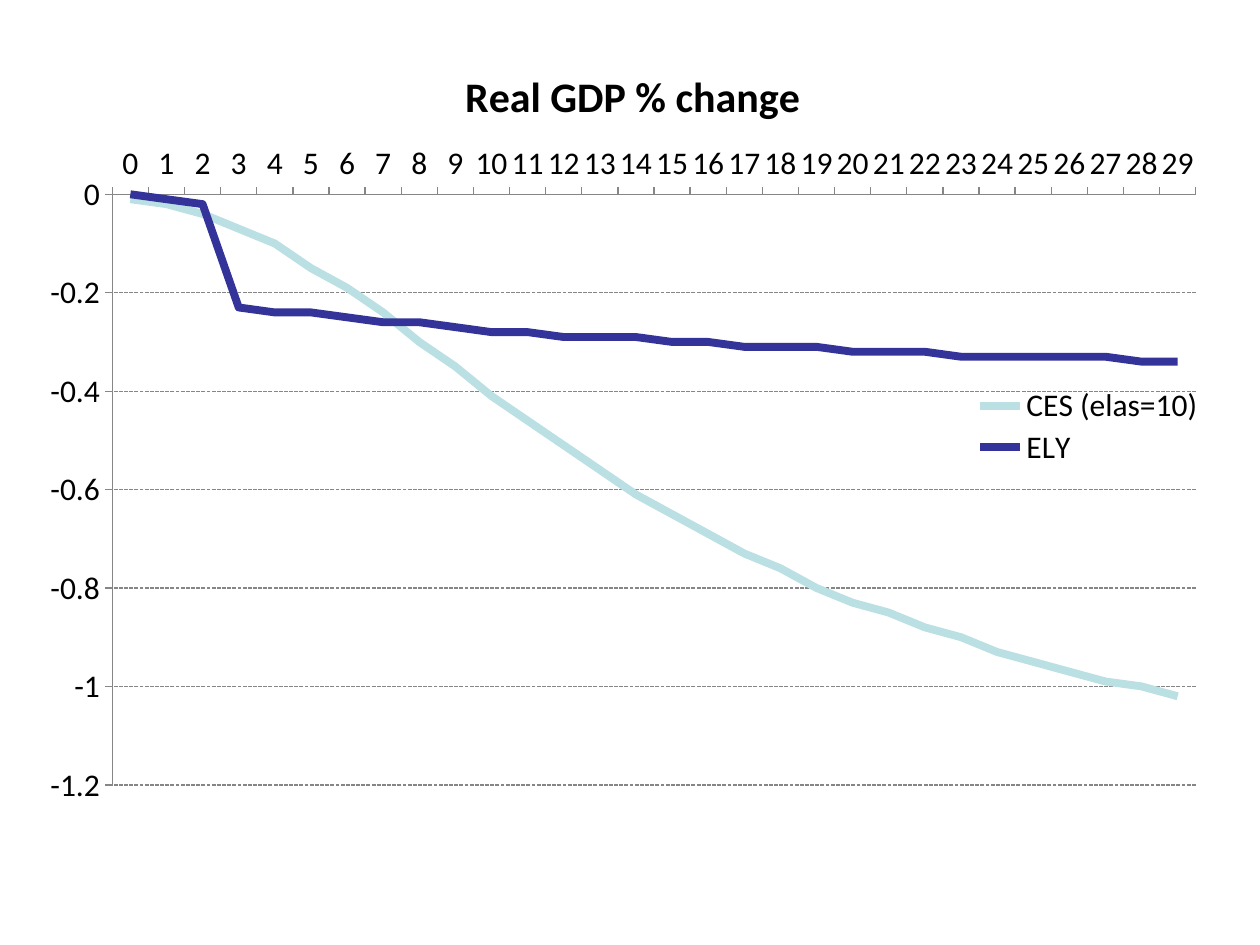
from lxml.etree import SubElement
from pptx import Presentation
from pptx.chart.data import CategoryChartData
from pptx.dml.color import RGBColor
from pptx.enum.chart import XL_CHART_TYPE, XL_LEGEND_POSITION, XL_TICK_LABEL_POSITION, XL_TICK_MARK
from pptx.enum.dml import MSO_LINE
from pptx.oxml.ns import qn
from pptx.util import Inches, Pt

COLORS = {"text": "000000", "axis": "868686", "CES (elas=10)": "BBE0E3", "ELY": "333399"}
GDP_CHANGE = {
    "CES (elas=10)": [
        -0.01, -0.02, -0.04, -0.07, -0.1, -0.15, -0.19, -0.24, -0.3, -0.35,
        -0.41, -0.46, -0.51, -0.56, -0.61, -0.65, -0.69, -0.73, -0.76, -0.8,
        -0.83, -0.85, -0.88, -0.9, -0.93, -0.95, -0.97, -0.99, -1, -1.02],
    "ELY": [
        0, -0.01, -0.02, -0.23, -0.24, -0.24, -0.25, -0.26, -0.26, -0.27,
        -0.28, -0.28, -0.29, -0.29, -0.29, -0.3, -0.3, -0.31, -0.31, -0.31,
        -0.32, -0.32, -0.32, -0.33, -0.33, -0.33, -0.33, -0.33, -0.34, -0.34],
}


def set_attrs(obj, **values):
    for name, value in values.items():
        setattr(obj, name, value)


def style_font(font, size, bold=False):
    set_attrs(font, name="Calibri", size=Pt(size), bold=bold)
    font.color.rgb = RGBColor.from_string(COLORS["text"])


def style_line(line, color, width, dash=None):
    line.color.rgb = RGBColor.from_string(COLORS[color])
    line.width = Pt(width)
    if dash:
        line.dash_style = dash


def place(element, before, x, y, w=None, h=None, inner=False):
    """Fix a chart part at fractions of the chart area."""
    for old in element.findall(qn("c:layout")):
        element.remove(old)
    layout = SubElement(element, qn("c:layout"))
    manual = SubElement(layout, qn("c:manualLayout"))
    values = {"layoutTarget": "inner" if inner else None,
              "xMode": "edge", "yMode": "edge", "x": x, "y": y, "w": w, "h": h}
    for tag, value in values.items():
        if value is not None:
            SubElement(manual, qn(f"c:{tag}")).set("val", str(value))
    following = element.find(qn(before))
    if following is not None:
        following.addprevious(layout)


def add_gdp_chart(slide):
    data = CategoryChartData()
    data.categories = [str(year) for year in range(30)]
    for name, values in GDP_CHANGE.items():
        data.add_series(name, values)
    frame = slide.shapes.add_chart(XL_CHART_TYPE.LINE, Inches(0.23), Inches(0.23),
                                   Inches(9.45), Inches(6.25), data)
    chart = frame.chart
    style_font(chart.font, 10)
    for series in chart.plots[0].series:
        series.smooth = False
        style_line(series.format.line, series.name, 4.5)
    place(chart._chartSpace.chart.plotArea, "c:lineChart", 0.07, 0.21, 0.91, 0.75, inner=True)
    return chart


def add_title(chart, text):
    chart.has_title = True
    title = chart.chart_title
    p = title.text_frame.paragraphs[0]
    r = p.add_run()
    r.text = text
    style_font(r.font, 24, bold=True)
    title.include_in_layout = False
    place(title._element, "c:overlay", 0.36, 0.04)


def add_legend(chart):
    chart.has_legend = True
    legend = chart.legend
    set_attrs(legend, position=XL_LEGEND_POSITION.RIGHT, include_in_layout=True)
    style_font(legend.font, 18)
    legend.format_fill = None
    place(legend._element, "c:overlay", 0.79, 0.45, 0.2, 0.11)


def style_axes(chart):
    formats = {
        chart.category_axis: dict(major_tick_mark=XL_TICK_MARK.INSIDE,
                                  tick_label_position=XL_TICK_LABEL_POSITION.HIGH),
        chart.value_axis: dict(major_tick_mark=XL_TICK_MARK.OUTSIDE, minimum_scale=-1.2,
                               maximum_scale=0, major_unit=0.2, has_major_gridlines=True),
    }
    for axis, values in formats.items():
        set_attrs(axis, **values)
        style_font(axis.tick_labels.font, 18)
        style_line(axis.format.line, "axis", 0.75)
    set_attrs(chart.value_axis.tick_labels, number_format="General", number_format_is_linked=False)
    style_line(chart.value_axis.major_gridlines.format.line, "axis", 0.75, MSO_LINE.SQUARE_DOT)


def main():
    prs = Presentation()
    set_attrs(prs, slide_width=Inches(10), slide_height=Inches(7.5))
    slide = prs.slides.add_slide(prs.slide_layouts[6])
    chart = add_gdp_chart(slide)
    add_title(chart, "Real GDP % change")
    add_legend(chart)
    style_axes(chart)
    prs.save("out.pptx")


if __name__ == "__main__":
    main()
